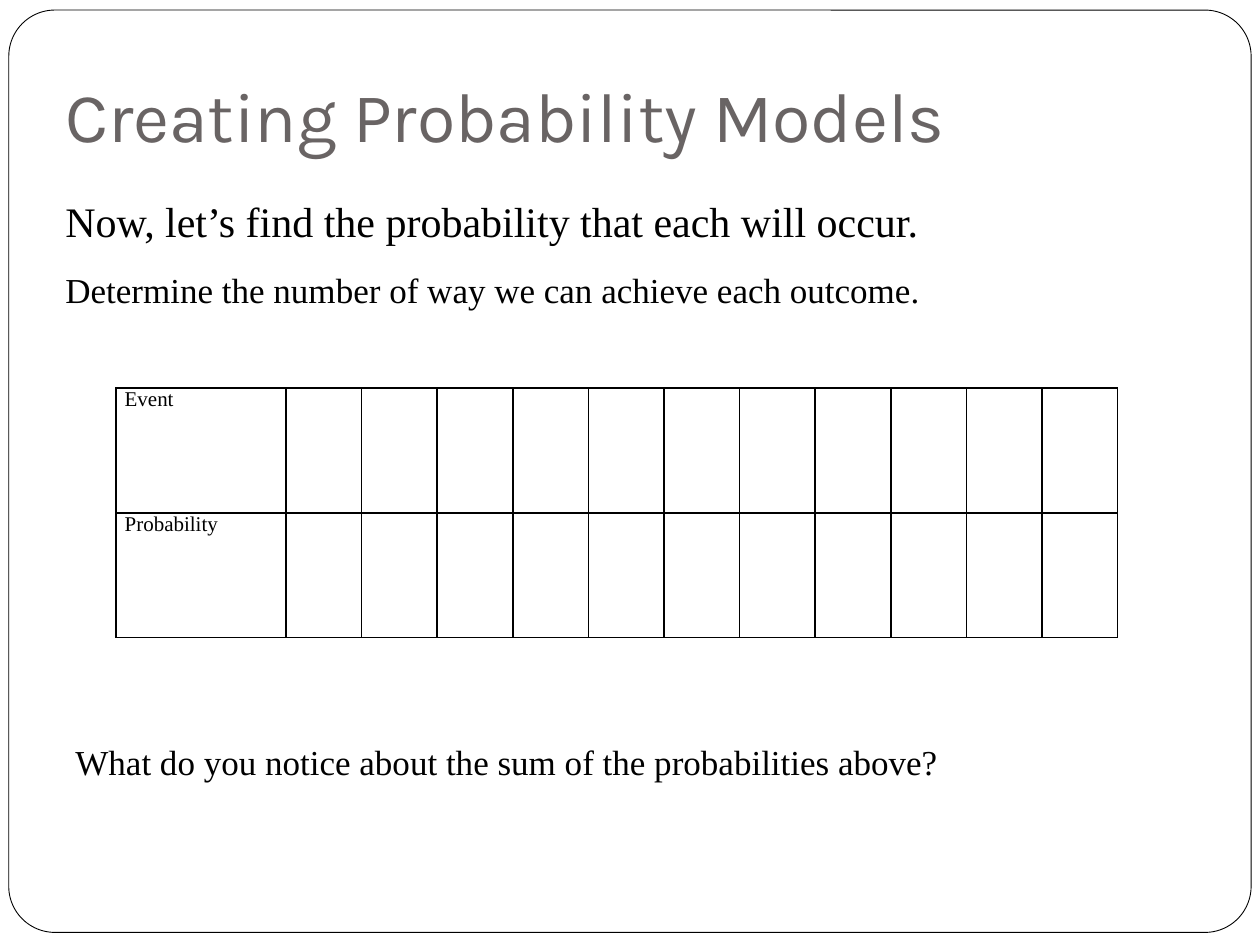
from dataclasses import dataclass

from lxml import etree
from pptx import Presentation
from pptx import util as u
from pptx.dml.color import RGBColor
from pptx.enum import shapes, text
from pptx.oxml import ns


@dataclass(frozen=True)
class Theme:
    paper: str = "FFFFFF"
    ink: str = "000000"
    heading: str = "696464"
    heading_font: str = "Karla"
    body_font: str = "Times New Roman"
    title_size: int = 40
    lead_size: int = 24
    body_size: int = 20
    table_size: int = 12
    frame_width: float = 0.5
    border_width: float = 1


class SlideBuilder:
    def __init__(self, slide, theme):
        self.s = slide
        self.theme = theme

    def frame(self, left, top, width, height, radius):
        sp = self.s.shapes.add_shape(
            shapes.MSO_SHAPE.ROUNDED_RECTANGLE,
            *map(u.Inches, (left, top, width, height)))
        sp.adjustments[0] = radius
        sp.shadow.inherit = False
        sp.fill.solid()
        sp.fill.fore_color.rgb = RGBColor.from_string(self.theme.paper)
        sp.line.color.rgb = RGBColor.from_string(self.theme.ink)
        sp.line.width = u.Pt(self.theme.frame_width)

    def styled_run(self, tf, words, size, font=None, color=None):
        r = tf.paragraphs[0].add_run()
        r.text = words
        style = {"size": u.Pt(size), "name": font or self.theme.body_font}
        for name, value in style.items():
            setattr(r.font, name, value)
        r.font.color.rgb = RGBColor.from_string(color or self.theme.ink)

    def text_box(self, left, top, width, height, words, size,
                 font=None, color=None, **frame_format):
        sp = self.s.shapes.add_textbox(
            *map(u.Inches, (left, top, width, height)))
        tf = sp.text_frame
        for name, value in {"word_wrap": True, **frame_format}.items():
            setattr(tf, name, value)
        self.styled_run(tf, words, size, font, color)

    def border(self, cell):
        """Rule all four sides; borders must come before the cell's fill."""
        tc_pr = cell._tc.get_or_add_tcPr()
        for side in ("lnL", "lnR", "lnT", "lnB"):
            ln = etree.SubElement(tc_pr, ns.qn(f"a:{side}"),
                                  w=str(u.Pt(self.theme.border_width)))
            fill = etree.SubElement(ln, ns.qn("a:solidFill"))
            etree.SubElement(fill, ns.qn("a:srgbClr"), val=self.theme.ink)

    def table(self, left, top, labels, label_width, blanks, blank_width,
              row_height):
        """Draw one row per label, each followed by blank answer cells."""
        widths = [label_width] + [blank_width] * blanks
        grid = self.s.shapes.add_table(
            len(labels), len(widths), u.Inches(left), u.Inches(top),
            u.Inches(sum(widths)), u.Inches(row_height * len(labels))).table
        for column, width in zip(grid.columns, widths):
            column.width = u.Inches(width)
        for row, label in zip(grid.rows, labels):
            row.height = u.Inches(row_height)
            for cell in row.cells:
                self.border(cell)
                cell.fill.solid()
                cell.fill.fore_color.rgb = RGBColor.from_string(
                    self.theme.paper)
                margins = {"margin_left": 0.07, "margin_right": 0.07,
                           "margin_top": 0, "margin_bottom": 0}
                for name, value in margins.items():
                    setattr(cell, name, u.Inches(value))
            self.styled_run(row.cells[0].text_frame, label,
                            self.theme.table_size)


def main():
    prs = Presentation()
    prs.slide_width, prs.slide_height = u.Inches(10), u.Inches(7.5)
    theme = Theme()
    page = SlideBuilder(prs.slides.add_slide(prs.slide_layouts[6]), theme)

    page.frame(0.07, 0.08, 9.86, 7.32, radius=0.05)
    page.text_box(0.42, 0.37, 8.5, 0.97, "Creating Probability Models",
                  theme.title_size, theme.heading_font, theme.heading,
                  vertical_anchor=text.MSO_ANCHOR.BOTTOM,
                  margin_bottom=u.Inches(0.1))

    fit = {"auto_size": text.MSO_AUTO_SIZE.SHAPE_TO_FIT_TEXT}
    page.text_box(0.42, 1.5, 8.83, 0.5,
                  "Now, let’s find the probability that each will occur.",
                  theme.lead_size, **fit)
    page.text_box(0.42, 2.08, 7.75, 0.44,
                  "Determine the number of way we can achieve each outcome.",
                  theme.body_size, **fit)
    page.table(0.92, 3.08, ("Event", "Probability"), label_width=1.35,
               blanks=11, blank_width=0.6, row_height=0.99)
    page.text_box(0.5, 5.83, 7.75, 0.44,
                  "What do you notice about the sum of the probabilities above?",
                  theme.body_size, **fit)

    prs.save("out.pptx")


if __name__ == "__main__":
    main()
